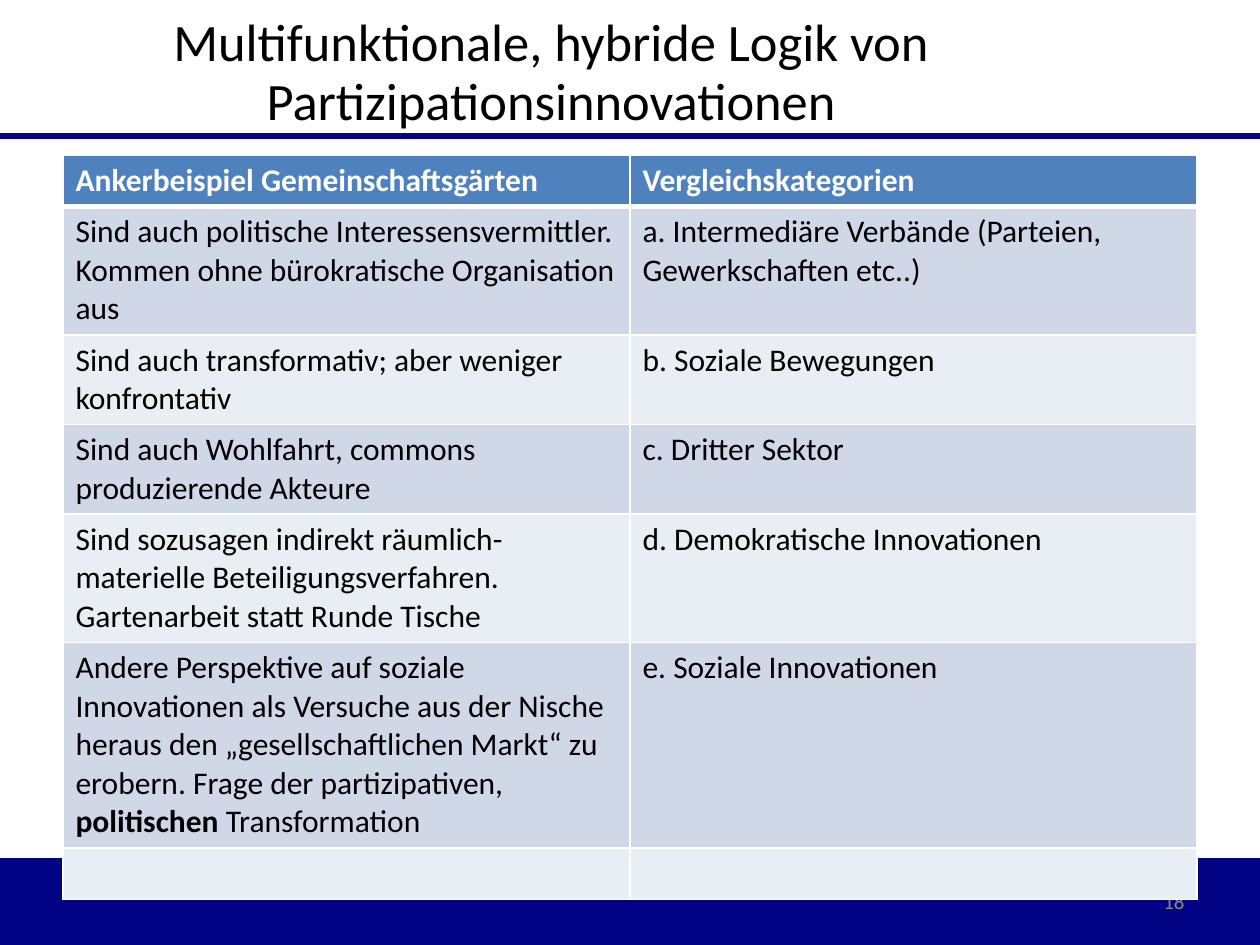
from dataclasses import dataclass

from lxml.etree import SubElement
from pptx import Presentation
from pptx.dml.color import RGBColor as Rgb
from pptx.enum.shapes import MSO_CONNECTOR as Connector, MSO_SHAPE as Shape
from pptx.enum.text import MSO_ANCHOR as Anchor, PP_ALIGN as Align
from pptx.oxml.ns import qn
from pptx.util import Inches, Pt


@dataclass(frozen=True)
class Theme:
    font: str = "Calibri"
    navy: str = "030385"
    black: str = "000000"
    white: str = "FFFFFF"
    grey: str = "898989"
    header: str = "4F81BD"
    bands: tuple[str, str] = ("D0D8E8", "E9EDF4")
    title_size: int = 30
    title_spacing: float = 0.95
    table_size: int = 18
    number_size: int = 12
    rule_width: int = 3
    border_width: int = 1
    header_border_width: int = 3


@dataclass(frozen=True)
class Run:
    text: str
    bold: bool = False


@dataclass(frozen=True)
class Comparison:
    example: tuple[Run, ...] = ()
    category: tuple[Run, ...] = ()
    height: float = 0.41


THEME = Theme()
HEADER = Comparison(
    (Run("Ankerbeispiel Gemeinschaftsgärten", True),),
    (Run("Vergleichskategorien", True),),
)
COMPARISONS = [
    Comparison(
        (Run("Sind auch politische Interessensvermittler. "
             "Kommen ohne bürokratische Organisation aus"),),
        (Run("a. Intermediäre Verbände (Parteien, Gewerkschaften etc..)"),),
        1.02,
    ),
    Comparison(
        (Run("Sind auch transformativ; aber weniger konfrontativ"),),
        (Run("b. Soziale Bewegungen"),),
        0.71,
    ),
    Comparison(
        (Run("Sind auch Wohlfahrt, commons produzierende Akteure"),),
        (Run("c. Dritter Sektor"),),
        0.71,
    ),
    Comparison(
        (Run("Sind sozusagen indirekt räumlich-materielle "
             "Beteiligungsverfahren. Gartenarbeit statt Runde Tische"),),
        (Run("d. Demokratische Innovationen"),),
        1.02,
    ),
    Comparison(
        (Run("Andere Perspektive auf soziale Innovationen als Versuche aus der "
             "Nische heraus den „gesellschaftlichen Markt“ zu erobern. "
             "Frage der partizipativen, "),
         Run("politischen", True),
         Run(" Transformation")),
        (Run("e. Soziale Innovationen"),),
        1.63,
    ),
    Comparison(),
]


def apply_format(target, values: dict) -> None:
    for attribute, value in values.items():
        setattr(target, attribute, value)


def write_runs(paragraph, runs: tuple[Run, ...], size: int, color: str) -> None:
    for part in runs:
        run = paragraph.add_run()
        run.text = part.text
        apply_format(run.font, {"name": THEME.font, "size": Pt(size), "bold": part.bold})
        run.font.color.rgb = Rgb.from_string(color)


def draw_frame(slide) -> None:
    footer = slide.shapes.add_shape(
        Shape.RECTANGLE, 0, Inches(6.81), Inches(10), Inches(0.69))
    footer.shadow.inherit = False
    footer.fill.solid()
    footer.fill.fore_color.rgb = Rgb.from_string(THEME.navy)
    footer.line.fill.background()

    rule = slide.shapes.add_connector(
        Connector.STRAIGHT, 0, Inches(1.08), Inches(10), Inches(1.08))
    rule.line.color.rgb = Rgb.from_string(THEME.navy)
    rule.line.width = Pt(THEME.rule_width)
    SubElement(rule.element.spPr, qn("a:effectLst"))


def draw_title(slide, text: str) -> None:
    title = slide.shapes.title
    title.element.getparent().append(title.element)
    apply_format(title, {"left": Inches(0.28), "top": Inches(0.04),
                         "width": Inches(8.19), "height": Inches(1.25)})
    apply_format(title.text_frame, {"word_wrap": True, "vertical_anchor": Anchor.MIDDLE,
                                    "margin_top": Inches(0.05),
                                    "margin_bottom": Inches(0.22)})
    heading = title.text_frame.paragraphs[0]
    apply_format(heading, {"alignment": Align.CENTER,
                           "line_spacing": THEME.title_spacing})
    write_runs(heading, (Run(text),), THEME.title_size, THEME.black)


def draw_page_number(slide, number: int) -> None:
    frame = slide.shapes.add_textbox(
        Inches(7.17), Inches(6.95), Inches(2.33), Inches(0.4)).text_frame
    apply_format(frame, {"word_wrap": True, "vertical_anchor": Anchor.MIDDLE})
    frame.paragraphs[0].alignment = Align.RIGHT
    write_runs(frame.paragraphs[0], (Run(str(number)),), THEME.number_size, THEME.grey)


def set_borders(cell, widths: dict[str, int]) -> None:
    properties = cell._tc.get_or_add_tcPr()
    for position, (side, width) in enumerate(widths.items()):
        border = properties.makeelement(qn(f"a:{side}"), {"w": str(Pt(width))})
        fill = SubElement(border, qn("a:solidFill"))
        SubElement(fill, qn("a:srgbClr"), val=THEME.white)
        properties.insert(position, border)


def fill_cell(cell, runs: tuple[Run, ...], fill: str, color: str,
              top: int, bottom: int) -> None:
    cell.fill.solid()
    cell.fill.fore_color.rgb = Rgb.from_string(fill)
    thin = THEME.border_width
    set_borders(cell, {"lnL": thin, "lnR": thin, "lnT": top, "lnB": bottom})
    write_runs(cell.text_frame.paragraphs[0], runs, THEME.table_size, color)


def draw_comparison(slide, header: Comparison, comparisons: list[Comparison]) -> None:
    rows = [header, *comparisons]
    table = slide.shapes.add_table(
        len(rows), 2, Inches(0.5), Inches(1.23),
        Inches(9), Inches(sum(row.height for row in rows))).table
    thin, thick = THEME.border_width, THEME.header_border_width
    for index, comparison in enumerate(rows):
        table.rows[index].height = Inches(comparison.height)
        is_header = index == 0
        fill = THEME.header if is_header else THEME.bands[(index - 1) % 2]
        color = THEME.white if is_header else THEME.black
        top = thick if index == 1 else thin
        bottom = thick if is_header else thin
        for column, runs in enumerate((comparison.example, comparison.category)):
            fill_cell(table.cell(index, column), runs, fill, color, top, bottom)


def main() -> None:
    deck = Presentation()
    apply_format(deck, {"slide_width": Inches(10), "slide_height": Inches(7.5)})
    slide = deck.slides.add_slide(deck.slide_layouts.get_by_name("Title Only"))
    draw_frame(slide)
    draw_title(slide, "Multifunktionale, hybride Logik von Partizipationsinnovationen")
    draw_page_number(slide, 18)
    draw_comparison(slide, HEADER, COMPARISONS)
    deck.save("out.pptx")


if __name__ == "__main__":
    main()
